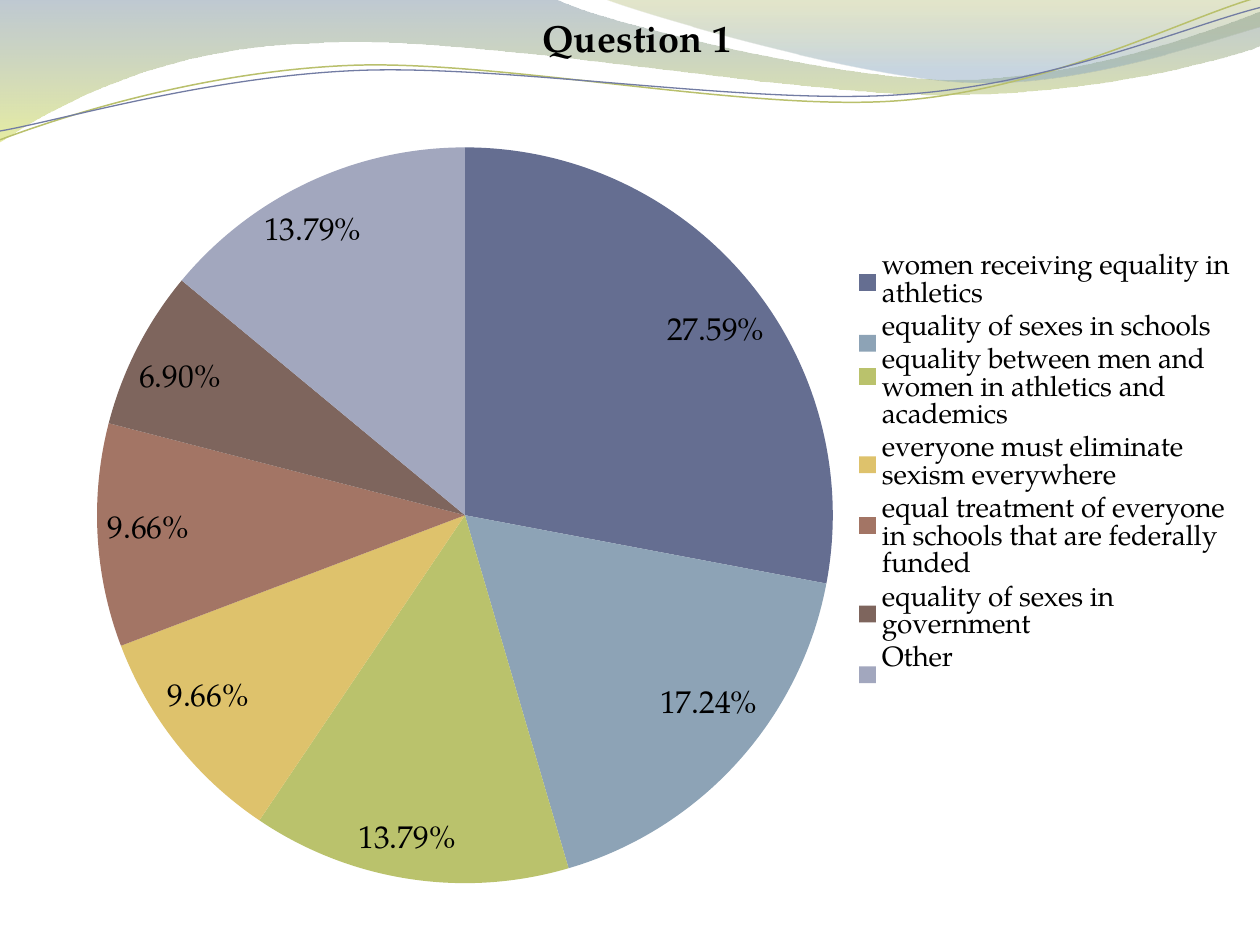
"""Build the Question 1 slide: a pie chart of survey answers under a wave header."""
from lxml import etree
from pptx import Presentation
from pptx import util as u
from pptx.chart import data as chart_data
from pptx.dml.color import RGBColor
from pptx.enum import chart as ce
from pptx.oxml import ns

FONT = "TeX Gyre Pagella"
BLACK = RGBColor(0, 0, 0)
SLATE = RGBColor(0x72, 0x88, 0x9B)
LIME = RGBColor(0xD3, 0xDE, 0x57)
OLIVE = RGBColor(0xA4, 0xAC, 0x50)
SKY = RGBColor(0x84, 0xA3, 0xBD)
GREEN_LINE = RGBColor(0xB9, 0xC0, 0x6C)
BLUE_LINE = RGBColor(0x72, 0x7C, 0xA3)

TITLE = "Question 1"
ANSWERS = [
    ("women receiving equality in athletics", 0.2759, RGBColor(0x65, 0x6E, 0x91)),
    ("equality of sexes in schools", 0.1724, RGBColor(0x8D, 0xA3, 0xB6)),
    ("equality between men and women in athletics and academics", 0.1379,
     RGBColor(0xBA, 0xC2, 0x6C)),
    ("everyone must eliminate sexism everywhere", 0.0966, RGBColor(0xDE, 0xC2, 0x6C)),
    ("equal treatment of everyone in schools that are federally funded", 0.0966,
     RGBColor(0xA3, 0x75, 0x65)),
    ("equality of sexes in government", 0.069, RGBColor(0x7E, 0x65, 0x5D)),
    ("Other", 0.1379, RGBColor(0xA2, 0xA7, 0xBE)),
]
CHART_BOX = (0.08, 0, 9.83, 7.42)
PIE_BOX = (0.77, 1.17, 5.84, 5.84)
LEGEND_BOX = (6.74, 1.98, 3.1, 3.42)
TITLE_CORNER = (4.25, 0.11)

BANDS = [
    ([(0, 0), (4.4, -0.01), (4.76, 0.17, 6.64, 0.63, 7.58, 0.63),
      (8.53, 0.63, 9.58, 0.26, 10, 0.09), (10.01, 0.36),
      (9.83, 0.44, 8.7, 0.76, 7.46, 0.75), (6.22, 0.75, 3.82, 0.28, 2.57, 0.34),
      (1.29, 0.36, 0.46, 0.83, -0.01, 1.13)],
     [(0, SLATE, 45), (1, LIME, 55)]),
    ([(4.79, -0.01), (5.09, 0.11, 6.82, 0.62, 7.69, 0.65),
      (8.56, 0.69, 9.61, 0.32, 10, 0.21), (10, 0)],
     [(0, OLIVE, 30), (0.8, SKY, 45)]),
]
WAVES = [
    ([(0, 1.11), (0.48, 0.93, 1.58, 0.57, 2.77, 0.52),
      (3.95, 0.47, 5.93, 0.89, 7.13, 0.8), (8.33, 0.71, 9.38, 0.15, 9.98, -0.02)],
     GREEN_LINE, 0.85),
    ([(0, 1.04), (0.47, 0.96, 1.64, 0.61, 2.83, 0.56),
      (4.03, 0.51, 5.97, 0.84, 7.17, 0.75), (8.36, 0.67, 9.41, 0.21, 10, 0.06)],
     BLUE_LINE, 0.75),
]


def add_outline(slide, segments, close):
    """Draw an outline where two numbers make a line and six a cubic curve."""
    points = [(u.Inches(segment[i]), u.Inches(segment[i + 1]))
              for segment in segments for i in range(0, len(segment), 2)]
    builder = slide.shapes.build_freeform(*points[0])
    builder.add_line_segments(points[1:], close=close)
    outline = builder.convert_to_shape()
    outline.shadow.inherit = False
    strokes = iter(outline._element.spPr.findall(".//" + ns.qn("a:lnTo")))
    for segment in segments[1:]:
        stroke = next(strokes)
        if len(segment) == 6:
            stroke_group = [stroke, next(strokes), next(strokes)]
            curve = etree.Element(ns.qn("a:cubicBezTo"))
            stroke.addprevious(curve)
            for part in stroke_group:
                curve.append(part[0])
                part.getparent().remove(part)
    return outline


def add_band(slide, segments, stops):
    """Add a see-through header band, shaded from top to bottom."""
    band = add_outline(slide, segments, True)
    band.line.fill.background()
    band.fill.gradient()
    band.fill.gradient_angle = 270
    for stop, (position, color, _) in zip(band.fill.gradient_stops, stops):
        stop.position = position
        stop.color.rgb = color
    tints = band._element.spPr.findall(".//" + ns.qn("a:gs") + "/" + ns.qn("a:srgbClr"))
    for tint, (_, _, opacity) in zip(tints, stops):
        etree.SubElement(tint, ns.qn("a:alpha"), val=str(opacity * 1000))


def add_wave(slide, segments, color, width):
    """Add a thin wavy line."""
    wave = add_outline(slide, segments, False)
    wave.fill.background()
    wave.line.color.rgb = color
    wave.line.width = u.Pt(width)


def format_font(font, size, bold=False, color=BLACK):
    """Set the common font properties."""
    font.name, font.size, font.bold = FONT, u.Pt(size), bold
    font.color.rgb = color


def write_text(frame, text, **style):
    """Write one formatted line into a text frame."""
    frame.text = text
    format_font(frame.paragraphs[0].runs[0].font, **style)


def place_in_chart(part, box, after=None, inner=False):
    """Fix a chart part to a corner or box given in slide inches."""
    for old in part.findall(ns.qn("c:layout")):
        part.remove(old)
    layout = etree.Element(ns.qn("c:layout"))
    manual = etree.SubElement(layout, ns.qn("c:manualLayout"))
    left, top, width, height = CHART_BOX
    fractions = [(box[0] - left) / width, (box[1] - top) / height]
    if len(box) == 4:
        fractions += [box[2] / width, box[3] / height]
    values = [("layoutTarget", "inner")] if inner else []
    values += [("xMode", "edge"), ("yMode", "edge")]
    values += [(axis, round(fraction, 4)) for axis, fraction in zip("xywh", fractions)]
    for tag, value in values:
        etree.SubElement(manual, ns.qn("c:" + tag), val=str(value))
    if after:
        part.find(ns.qn(after)).addnext(layout)
    else:
        part.insert(0, layout)


def add_answers_pie(slide):
    """Add the pie chart with its title, legend and value labels."""
    answers = chart_data.CategoryChartData(number_format="0.00%")
    answers.categories = [answer for answer, _, _ in ANSWERS]
    answers.add_series("Series 1", [share for _, share, _ in ANSWERS])
    pie = slide.shapes.add_chart(
        ce.XL_CHART_TYPE.PIE, *map(u.Inches, CHART_BOX), answers).chart
    format_font(pie.font, 18)
    pie.has_title = True
    write_text(pie.chart_title.text_frame, TITLE, size=21.6, bold=True)
    pie.has_legend = True
    pie.legend.position = ce.XL_LEGEND_POSITION.RIGHT
    pie.legend.include_in_layout = False
    format_font(pie.legend.font, 16)

    plot = pie.plots[0]
    plot.vary_by_categories = True
    plot.has_data_labels = True
    labels = plot.data_labels
    labels.show_value = True
    labels.show_percentage = False
    labels.number_format = "0.00%"
    labels.number_format_is_linked = False
    labels.position = ce.XL_LABEL_POSITION.BEST_FIT
    format_font(labels.font, 18)
    for index, (_, _, color) in enumerate(ANSWERS):
        wedge = plot.series[0].points[index].format
        wedge.fill.solid()
        wedge.fill.fore_color.rgb = color
        wedge.line.fill.background()
    place_in_chart(pie._chartSpace.chart.plotArea, PIE_BOX, inner=True)
    place_in_chart(pie.legend._element, LEGEND_BOX, after="c:legendPos")
    place_in_chart(pie.chart_title._element, TITLE_CORNER, after="c:tx")


def main():
    """Build and save the slide."""
    deck = Presentation()
    deck.slide_width, deck.slide_height = u.Inches(10), u.Inches(7.5)
    slide = deck.slides.add_slide(deck.slide_layouts[6])
    for segments, stops in BANDS:
        add_band(slide, segments, stops)
    for segments, color, width in WAVES:
        add_wave(slide, segments, color, width)
    add_answers_pie(slide)
    deck.save("out.pptx")


if __name__ == "__main__":
    main()
